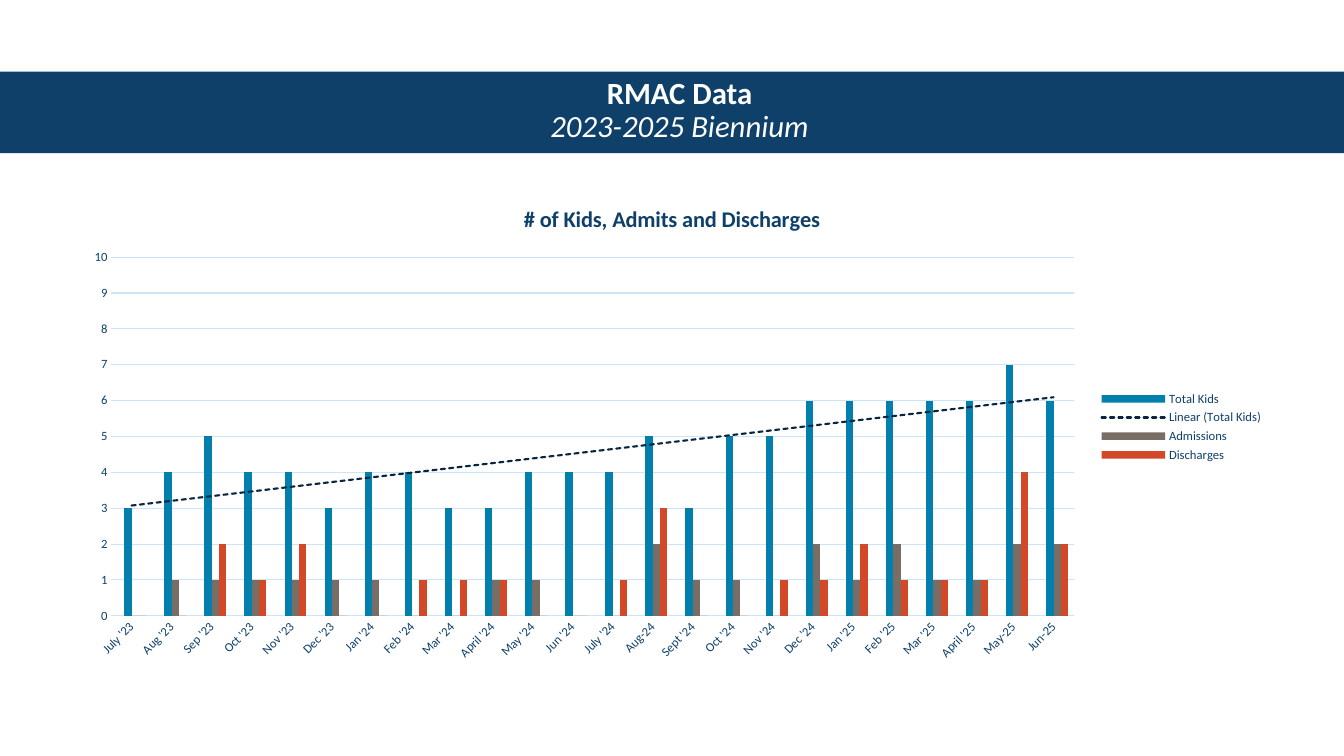
from dataclasses import dataclass

from pptx import Presentation
from pptx.chart.data import CategoryChartData
from pptx.dml.color import RGBColor
from pptx.enum.chart import XL_CHART_TYPE as ChartType, XL_LEGEND_POSITION as LegendPosition
from pptx.enum.chart import XL_TICK_MARK as TickMark
from pptx.enum.shapes import MSO_SHAPE as Shape
from pptx.enum.text import MSO_ANCHOR as Anchor, MSO_AUTO_SIZE as AutoSize, PP_ALIGN as Align
from pptx.oxml import parse_xml
from pptx.oxml.ns import nsdecls, qn
from pptx.util import Inches, Pt

TITLE, SUBTITLE = "RMAC Data", "2023-2025 Biennium"
CHART_TITLE = "# of Kids, Admits and Discharges"
MONTHS = [
    "July '23", "Aug '23", "Sep '23", "Oct '23", "Nov '23", "Dec '23",
    "Jan '24", "Feb '24", "Mar '24", "April '24", "May '24", "Jun '24",
    "July '24", "Aug-24", "Sept '24", "Oct '24", "Nov '24", "Dec '24",
    "Jan '25", "Feb '25", "Mar '25", "April '25", "May-25", "Jun-25",
]
SPACER = "Series 1"  # empty series that keeps the first bar slot of each month free
TREND_SERIES = "Total Kids"
SERIES = {
    SPACER: [None] * len(MONTHS),
    TREND_SERIES: [3, 4, 5, 4, 4, 3, 4, 4, 3, 3, 4, 4, 4, 5, 3, 5, 5, 6, 6, 6, 6, 6, 7, 6],
    "Admissions": [0, 1, 1, 1, 1, 1, 1, 0, 0, 1, 1, 0, 0, 2, 1, 1, 0, 2, 1, 2, 1, 1, 2, 2],
    "Discharges": [0, 0, 2, 1, 2, 0, 0, 1, 1, 1, 0, 0, 1, 3, 0, 0, 1, 1, 2, 1, 1, 1, 4, 2],
}

# Left, top, width, height in inches
SLIDE_WIDTH, SLIDE_HEIGHT = 13.33, 7.5
BAND = (0, 0.71, SLIDE_WIDTH, 0.81)
TITLE_BOX = (0.61, 0.7, 12.26, 0.81)
CHART_BOX = (0.7, 1.83, 11.93, 4.81)
# Shares of the chart's size
PLOT = {"x": 0.034, "y": 0.15, "w": 0.8, "h": 0.74}


@dataclass(frozen=True)
class Theme:
    font: str = "Calibri"
    navy: str = "0E406A"
    white: str = "FFFFFF"
    grid: str = "CBE4F8"
    trend: str = "082640"
    bars: tuple = ("DC441E", "037FAE", "796E66", "D34927")
    title_size: float = 22
    chart_title_size: float = 16
    chart_size: float = 10
    label_size: float = 9
    grid_width: float = 0.75
    trend_width: float = 1.5


THEME = Theme()


def rgb(color):
    return RGBColor.from_string(color)


def set_font(font, size, color, bold=None):
    font.name, font.size, font.bold = THEME.font, Pt(size), bold
    font.color.rgb = rgb(color)


def add_heading(slide):
    band = slide.shapes.add_shape(Shape.RECTANGLE, *map(Inches, BAND))
    band.shadow.inherit = False
    band.fill.solid()
    band.fill.fore_color.rgb = rgb(THEME.navy)
    band.line.fill.background()

    title = slide.shapes.title
    title.left, title.top, title.width, title.height = map(Inches, TITLE_BOX)
    band._element.addnext(title._element)
    frame = title.text_frame
    frame.auto_size, frame.vertical_anchor = AutoSize.NONE, Anchor.MIDDLE
    paragraph = frame.paragraphs[0]
    paragraph.alignment, paragraph.line_spacing = Align.CENTER, 0.9
    set_font(paragraph.font, THEME.title_size, THEME.white)
    name = paragraph.add_run()
    name.text, name.font.bold = TITLE, True
    paragraph.add_line_break()
    period = paragraph.add_run()
    period.text, period.font.bold, period.font.italic = SUBTITLE, False, True
    for run in (name, period):
        set_font(run.font, THEME.title_size, THEME.white, run.font.bold)


def format_axes(chart):
    months, counts = chart.category_axis, chart.value_axis
    for axis in (months, counts):
        axis.major_tick_mark = axis.minor_tick_mark = TickMark.NONE
        set_font(axis.tick_labels.font, THEME.label_size, THEME.navy)
    counts.minimum_scale, counts.maximum_scale, counts.major_unit = 0, 10, 1
    counts.has_major_gridlines = True
    counts.format.line.fill.background()
    for line in (months.format.line, counts.major_gridlines.format.line):
        line.color.rgb = rgb(THEME.grid)
        line.width = Pt(THEME.grid_width)
    body = months._element.find(f"{qn('c:txPr')}/{qn('a:bodyPr')}")
    body.set("rot", str(-45 * 60000))
    body.set("vert", "horz")


def add_trend_line(series):
    trend = parse_xml(
        f'<c:trendline {nsdecls("c", "a")}><c:name>Linear ({series.name})</c:name>'
        f'<c:spPr><a:ln w="{Pt(THEME.trend_width)}" cap="rnd"><a:solidFill>'
        f'<a:srgbClr val="{THEME.trend}"/></a:solidFill><a:prstDash val="sysDash"/></a:ln></c:spPr>'
        '<c:trendlineType val="linear"/><c:dispRSqr val="0"/><c:dispEq val="0"/></c:trendline>'
    )
    series._element.find(qn("c:cat")).addprevious(trend)


def place_plot(chart):
    """Fix the inner plot area at its share of the chart."""
    plot_area = chart._chartSpace.chart.plotArea
    for layout in plot_area.findall(qn("c:layout")):
        plot_area.remove(layout)
    sizes = "".join(f'<c:{key} val="{share}"/>' for key, share in PLOT.items())
    plot_area.insert(0, parse_xml(
        f'<c:layout {nsdecls("c")}><c:manualLayout><c:layoutTarget val="inner"/>'
        f'<c:xMode val="edge"/><c:yMode val="edge"/>{sizes}</c:manualLayout></c:layout>'
    ))


def add_legend(chart):
    chart.has_legend = True
    legend = chart.legend
    legend.position, legend.include_in_layout = LegendPosition.RIGHT, False
    set_font(legend.font, THEME.label_size, THEME.navy)
    hidden = list(SERIES).index(SPACER)
    legend._element.find(qn("c:legendPos")).addnext(parse_xml(
        f'<c:legendEntry {nsdecls("c")}><c:idx val="{hidden}"/><c:delete val="1"/></c:legendEntry>'
    ))


def add_kids_chart(slide):
    data = CategoryChartData()
    data.categories = MONTHS
    for name, values in SERIES.items():
        data.add_series(name, values)
    chart = slide.shapes.add_chart(
        ChartType.COLUMN_CLUSTERED, *map(Inches, CHART_BOX), data
    ).chart
    set_font(chart.font, THEME.chart_size, THEME.navy)
    chart.has_title = True
    heading = chart.chart_title.text_frame
    heading.text = CHART_TITLE
    set_font(heading.paragraphs[0].font, THEME.chart_title_size, THEME.navy, True)

    plot = chart.plots[0]
    plot.gap_width, plot.overlap, plot.vary_by_categories = 150, 0, False
    for series, color in zip(plot.series, THEME.bars):
        series.format.fill.solid()
        series.format.fill.fore_color.rgb = rgb(color)
        series.invert_if_negative = False
        if series.name == TREND_SERIES:
            add_trend_line(series)
    format_axes(chart)
    place_plot(chart)
    add_legend(chart)


def main():
    presentation = Presentation()
    presentation.slide_width = Inches(SLIDE_WIDTH)
    presentation.slide_height = Inches(SLIDE_HEIGHT)
    slide = presentation.slides.add_slide(presentation.slide_layouts.get_by_name("Title Only"))
    add_heading(slide)
    add_kids_chart(slide)
    presentation.save("out.pptx")


if __name__ == "__main__":
    main()
